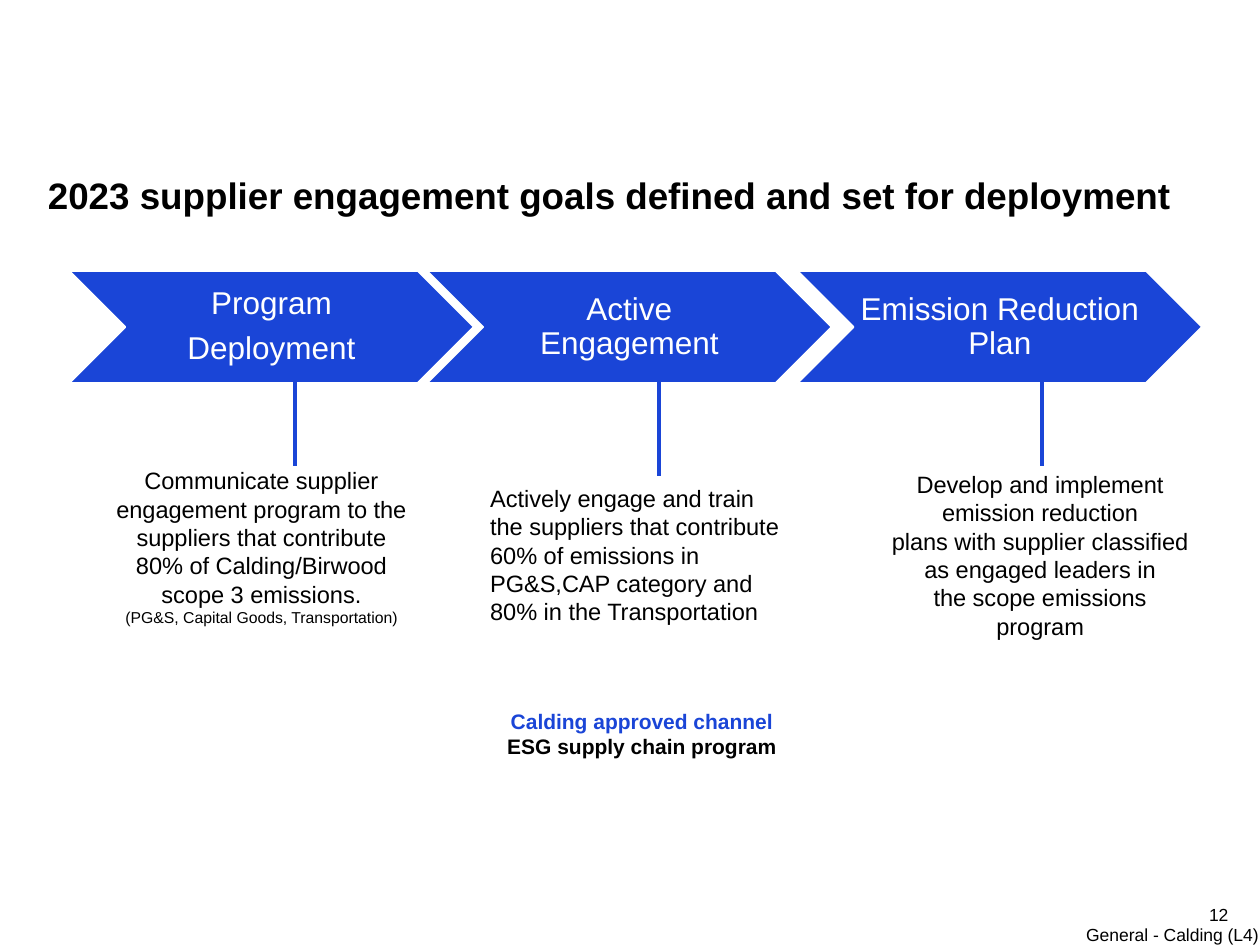
from lxml.etree import SubElement
from pptx import Presentation
from pptx.dml.color import RGBColor
from pptx.enum.shapes import MSO_CONNECTOR, MSO_SHAPE
from pptx.enum.text import MSO_ANCHOR as ANCHOR, MSO_AUTO_SIZE as AUTO, PP_ALIGN as ALIGN
from pptx.oxml.ns import qn
from pptx.util import Inches, Pt

# Content
COLORS = {"blue": "1A45D7", "white": "FFFFFF", "black": "000000"}
TITLE = "2023 supplier engagement goals defined and set for deployment"
STEPS = [
    {"label": ["Program", "Deployment"], "left": 0.55,
     "line": (2.34, 2.95), "note_at": (0.8, 3.66), "align": ALIGN.CENTER,
     "note": [("Communicate supplier", 13.5),
              ("engagement program to the suppliers that contribute\v"
               "80% of Calding/Birwood scope 3 emissions.", 13.5),
              ("(PG&S, Capital Goods, Transportation)", 9)]},
    {"label": ["Active\vEngagement"], "left": 3.39,
     "line": (5.23, 3.03), "note_at": (3.82, 3.8), "align": ALIGN.LEFT,
     "note": [("Actively engage and train\vthe suppliers that contribute "
               "60% of emissions in PG&S,CAP category and "
               "80% in the Transportation", 13.5)]},
    {"label": ["Emission Reduction\vPlan"], "left": 6.33,
     "line": (8.27, 2.95), "note_at": (6.98, 3.69), "align": ALIGN.CENTER,
     "note": [("Develop and implement emission reduction\v"
               "plans with supplier classified as engaged leaders in\v"
               "the scope emissions\vprogram", 13.5)]},
]
CHANNELS = [("Calding approved channel", "blue"), ("ESG supply chain program", "black")]
PAGE = "12"
FOOTER = "General - Calding (L4)"

# Sizes in inches
CHEVRON_TOP, CHEVRON_W, CHEVRON_H = 2.15, 3.21, 0.89
LINE_LEN, NOTE_W = 0.75, 2.55


def rgb(name):
    return RGBColor.from_string(COLORS[name])


def set_frame(tf, margins, anchor=ANCHOR.TOP, wrap=True):
    tf.margin_left, tf.margin_top, tf.margin_right, tf.margin_bottom = map(Inches, margins)
    tf.vertical_anchor = anchor
    tf.word_wrap = wrap
    tf.auto_size = AUTO.NONE


def write(tf, items, align=ALIGN.LEFT, bold=False):
    """Fill the frame with one paragraph for each (text, size, colour)."""
    tf.text = "\n".join(text for text, _, _ in items)
    for p, (_, size, color) in zip(tf.paragraphs, items):
        p.alignment = align
        for r in p.runs:
            r.font.name, r.font.size, r.font.bold = "Arial", Pt(size), bold
            r.font.color.rgb = rgb(color)


def add_text(s, box, items, margins=(0.07, 0.04, 0.07, 0.04), wrap=True,
             anchor=ANCHOR.TOP, **style):
    tf = s.shapes.add_textbox(*map(Inches, box)).text_frame
    set_frame(tf, margins, anchor, wrap)
    write(tf, items, **style)


def add_chevron(s, step):
    sp = s.shapes.add_shape(MSO_SHAPE.CHEVRON, Inches(step["left"]), Inches(CHEVRON_TOP),
                            Inches(CHEVRON_W), Inches(CHEVRON_H))
    sp.shadow.inherit = False
    sp.fill.solid()
    sp.fill.fore_color.rgb = rgb("blue")
    sp.line.color.rgb = rgb("white")
    sp.line.width = Pt(1)
    tf = sp.text_frame
    set_frame(tf, (0.03,) * 4, ANCHOR.MIDDLE)
    write(tf, [(text, 18, "white") for text in step["label"]], ALIGN.CENTER)
    for p in tf.paragraphs:
        p.line_spacing = 0.9
        p.space_after = Pt(6.3)


def add_line(s, x, y):
    line = s.shapes.add_connector(MSO_CONNECTOR.STRAIGHT, Inches(x), Inches(y),
                                  Inches(x), Inches(y + LINE_LEN))
    line.line.color.rgb = rgb("blue")
    line.line.width = Pt(2.25)
    SubElement(line._element.spPr, qn("a:effectLst"))


def main():
    prs = Presentation()
    prs.slide_width, prs.slide_height = Inches(10), Inches(7.5)
    s = prs.slides.add_slide(prs.slide_layouts[5])

    # Title
    title = s.shapes.title
    title.left, title.top, title.width, title.height = map(Inches, (0.38, 1.41, 9.44, 0.73))
    set_frame(title.text_frame, (0,) * 4)
    write(title.text_frame, [(TITLE, 21, "black")], bold=True)
    title.text_frame.paragraphs[0].line_spacing = 0.9

    # Steps: chevron, line down, note
    for step in STEPS:
        add_chevron(s, step)
        add_line(s, *step["line"])
        add_text(s, (*step["note_at"], NOTE_W, 1.4),
                 [(text, size, "black") for text, size in step["note"]], align=step["align"])

    # Channels
    add_text(s, (3.82, 5.58, NOTE_W, 0.5), [(text, 12, color) for text, color in CHANNELS],
             align=ALIGN.CENTER, bold=True)

    # Page number and footer
    add_text(s, (9.25, 7.16, 0.5, 0.2), [(PAGE, 10, "black")], (0, 0.05, 0, 0.05),
             anchor=ANCHOR.MIDDLE, align=ALIGN.RIGHT)
    add_text(s, (8.62, 7.33, 1.42, 0.17), [(FOOTER, 10, "black")], (0,) * 4, wrap=False)

    prs.save("out.pptx")


if __name__ == "__main__":
    main()
